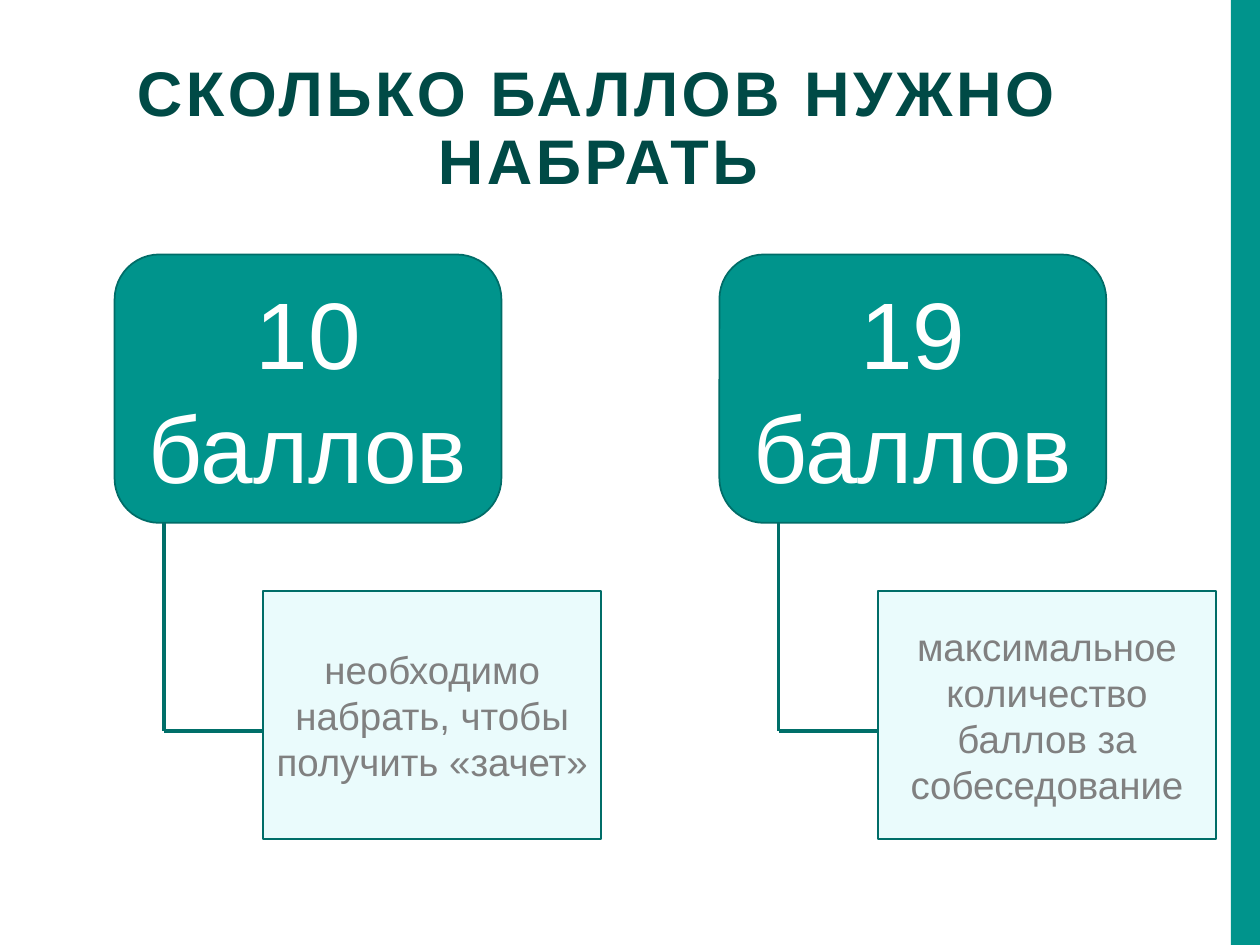
import dataclasses

import pptx
import pptx.dml.color
import pptx.enum.shapes
import pptx.enum.text
import pptx.oxml.ns
import pptx.util
import lxml.etree

SHAPES = pptx.enum.shapes.MSO_SHAPE
ANCHORS = pptx.enum.text.MSO_ANCHOR
COLUMNS, ROWS = 100, 75
SLIDE_WIDTH, SLIDE_HEIGHT = pptx.util.Inches(10), pptx.util.Inches(7.5)


@dataclasses.dataclass(frozen=True)
class Theme:
    font: str = "Arial"
    teal: str = "00948C"
    outline: str = "006D68"
    branch: str = "006F69"
    pale: str = "EAFBFC"
    heading: str = "004A46"
    grey: str = "808080"
    white: str = "FFFFFF"
    title_size: int = 36
    score_size: int = 54
    note_size: int = 22
    outline_width: int = 1
    branch_width: int = 2


@dataclasses.dataclass(frozen=True)
class Box:
    left: float
    top: float
    width: float
    height: float

    @property
    def right(self):
        return self.left + self.width

    @property
    def bottom(self):
        return self.top + self.height

    def emu(self):
        return (across(self.left), down(self.top),
                across(self.width), down(self.height))


THEME = Theme()
SCORE_WIDTH, SCORE_HEIGHT = 30.7, 21.3
NOTE_WIDTH, NOTE_HEIGHT = 26.8, 19.7
BRANCH_REACH, BRANCH_RISE = 7.9, 8.6
SCORES = [
    (Box(9.1, 20.2, 38.6, 46.4), "10 баллов",
     "необходимо набрать, чтобы получить «зачет»"),
    (Box(57.1, 20.2, 39.4, 46.4), "19 баллов",
     "максимальное количество баллов за собеседование"),
]


def across(columns):
    return round(SLIDE_WIDTH * columns / COLUMNS)


def down(rows):
    return round(SLIDE_HEIGHT * rows / ROWS)


def rgb(value):
    return pptx.dml.color.RGBColor.from_string(value)


def apply(target, values):
    for name, value in values.items():
        setattr(target, name, value)


def write(holder, wording, size, color, anchor, bold=False):
    apply(holder.text_frame, {
        "text": wording,
        "word_wrap": True,
        "auto_size": pptx.enum.text.MSO_AUTO_SIZE.NONE,
        "vertical_anchor": anchor,
    })
    paragraph = holder.text_frame.paragraphs[0]
    paragraph.alignment = pptx.enum.text.PP_ALIGN.CENTER
    run = paragraph.runs[0]
    apply(run.font, {"name": THEME.font, "size": pptx.util.Pt(size), "bold": bold})
    run.font.color.rgb = rgb(color)
    return paragraph


def add_panel(slide, box, preset, fill, outlined=True):
    panel = slide.shapes.add_shape(preset, *box.emu())
    panel.shadow.inherit = False
    panel.fill.solid()
    panel.fill.fore_color.rgb = rgb(fill)
    if outlined:
        panel.line.color.rgb = rgb(THEME.outline)
        panel.line.width = pptx.util.Pt(THEME.outline_width)
    else:
        panel.line.fill.background()
    return panel


def add_branch(slide, start, end):
    branch = slide.shapes.add_connector(
        pptx.enum.shapes.MSO_CONNECTOR.STRAIGHT,
        across(start[0]), down(start[1]), across(end[0]), down(end[1]))
    branch.line.color.rgb = rgb(THEME.branch)
    branch.line.width = pptx.util.Pt(THEME.branch_width)
    lxml.etree.SubElement(branch._element.spPr, pptx.oxml.ns.qn("a:effectLst"))


def place_title(slide, box, wording):
    title = slide.shapes.title
    apply(title, dict(zip(("left", "top", "width", "height"), box.emu())))
    paragraph = write(title, wording, THEME.title_size, THEME.heading,
                      ANCHORS.TOP, bold=True)
    paragraph.line_spacing = 0.9
    paragraph.runs[0].font._element.set("spc", "200")


def place_score(slide, box, score, meaning):
    score_box = Box(box.left, box.top, SCORE_WIDTH, SCORE_HEIGHT)
    note_box = Box(box.right - NOTE_WIDTH, box.bottom - NOTE_HEIGHT,
                   NOTE_WIDTH, NOTE_HEIGHT)
    score_panel = add_panel(slide, score_box, SHAPES.ROUNDED_RECTANGLE, THEME.teal)
    write(score_panel, score, THEME.score_size, THEME.white, ANCHORS.MIDDLE)
    note_panel = add_panel(slide, note_box, SHAPES.RECTANGLE, THEME.pale)
    write(note_panel, meaning, THEME.note_size, THEME.grey, ANCHORS.MIDDLE)

    corner = (note_box.left - BRANCH_REACH, box.bottom - BRANCH_RISE)
    add_branch(slide, (corner[0], score_box.bottom), corner)
    add_branch(slide, corner, (note_box.left, corner[1]))


def main():
    deck = pptx.Presentation()
    apply(deck, {"slide_width": SLIDE_WIDTH, "slide_height": SLIDE_HEIGHT})
    slide = deck.slides.add_slide(deck.slide_layouts.get_by_name("Title Only"))
    add_panel(slide, Box(97.7, 0, 2.3, ROWS), SHAPES.RECTANGLE,
              THEME.teal, outlined=False)
    place_title(slide, Box(0, 4.4, 94.9, 9.4), "СКОЛЬКО БАЛЛОВ НУЖНО НАБРАТЬ")
    for box, score, meaning in SCORES:
        place_score(slide, box, score, meaning)
    deck.save("out.pptx")


if __name__ == "__main__":
    main()
